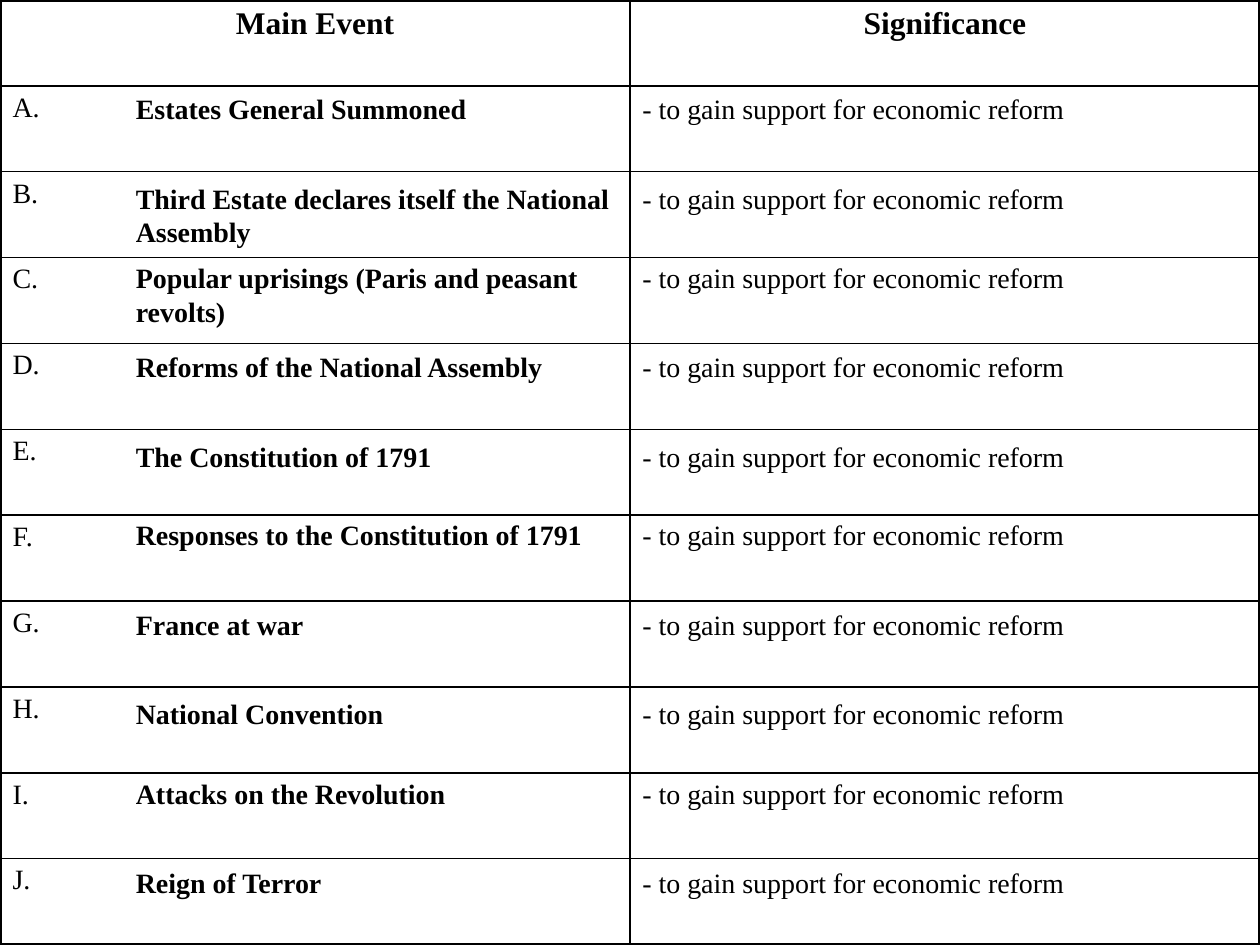
from dataclasses import dataclass

from lxml.etree import SubElement
from pptx import Presentation
from pptx.dml.color import RGBColor
from pptx.enum.text import MSO_AUTO_SIZE as AutoSize, PP_ALIGN as Align
from pptx.oxml.ns import qn
from pptx.util import Cm, Pt

BLACK = RGBColor(0x00, 0x00, 0x00)
FONT = "Times New Roman"
SLIDE_WIDTH, SLIDE_HEIGHT = Cm(25.4), Cm(19.05)
EVENT_LEFT, SIGNIFICANCE_LEFT = Cm(2.49), Cm(12.7)
TEXT_WIDTH = Cm(10.21)
ONE_LINE, TWO_LINES = Cm(0.94), Cm(1.63)
OUTER_BORDER, INNER_BORDER = Pt(2.25), Pt(1)
HEADERS = ("Main Event", "Significance")
REFORM = "- to gain support for economic reform"


@dataclass(frozen=True)
class Event:
    letter: str
    name: str
    top: float
    height: int = ONE_LINE
    significance: str = REFORM


EVENTS = [
    Event("A.", "Estates General Summoned", 1.73),
    Event("B.", "Third Estate declares itself the National Assembly", 3.53, TWO_LINES),
    Event("C.", "Popular uprisings (Paris and peasant revolts)", 5.13, TWO_LINES),
    Event("D.", "Reforms of the National Assembly", 6.93),
    Event("E.", "The Constitution of 1791", 8.74),
    Event("F.", "Responses to the Constitution of 1791", 10.31),
    Event("G.", "France at war", 12.12),
    Event("H.", "National Convention", 13.92),
    Event("I.", "Attacks on the Revolution", 15.52),
    Event("J.", "Reign of Terror", 17.32),
]


def write(frame, text: str, size: int, bold: bool, space_percent: int, align=Align.LEFT) -> None:
    paragraph = frame.paragraphs[0]
    paragraph.alignment = align
    space_before = SubElement(paragraph._p.get_or_add_pPr(), qn("a:spcBef"))
    SubElement(space_before, qn("a:spcPct"), val=str(space_percent * 1000))
    run = paragraph.add_run()
    run.text = text
    for name, value in {"name": FONT, "size": Pt(size), "bold": bold}.items():
        setattr(run.font, name, value)
    run.font.color.rgb = BLACK


def set_borders(cell, widths: dict[str, int]) -> None:
    properties = cell._tc.get_or_add_tcPr()
    for side, width in widths.items():
        line = SubElement(properties, qn(f"a:ln{side}"), w=str(width))
        fill = SubElement(line, qn("a:solidFill"))
        SubElement(fill, qn("a:srgbClr"), val=str(BLACK))


def add_event_table(slide) -> None:
    row_count, column_count = len(EVENTS) + 1, len(HEADERS)
    table = slide.shapes.add_table(
        row_count, column_count, 0, 0, SLIDE_WIDTH, SLIDE_HEIGHT
    ).table
    table.first_row = table.horz_banding = False
    for row in range(row_count):
        for column in range(column_count):
            cell = table.cell(row, column)
            on_edge = {
                "L": column == 0,
                "R": column == column_count - 1,
                "T": row == 0,
                "B": row == row_count - 1,
            }
            set_borders(cell, {
                side: OUTER_BORDER if edge else INNER_BORDER
                for side, edge in on_edge.items()
            })
            cell.fill.background()
    for column, header in enumerate(HEADERS):
        write(table.cell(0, column).text_frame, header, 18, True, 20, Align.CENTER)
    for row, event in enumerate(EVENTS, start=1):
        write(table.cell(row, 0).text_frame, event.letter, 16, False, 20)


def add_text(slide, text: str, left: int, top: int, height: int, bold: bool) -> None:
    frame = slide.shapes.add_textbox(left, top, TEXT_WIDTH, height).text_frame
    frame.word_wrap = True
    frame.auto_size = AutoSize.SHAPE_TO_FIT_TEXT
    write(frame, text, 16, bold, 50)


def main() -> None:
    presentation = Presentation()
    presentation.slide_width, presentation.slide_height = SLIDE_WIDTH, SLIDE_HEIGHT
    slide = presentation.slides.add_slide(presentation.slide_layouts[6])
    add_event_table(slide)
    for event in EVENTS:
        top = Cm(event.top)
        add_text(slide, event.name, EVENT_LEFT, top, event.height, True)
        add_text(slide, event.significance, SIGNIFICANCE_LEFT, top, ONE_LINE, False)
    presentation.save("out.pptx")


if __name__ == "__main__":
    main()
